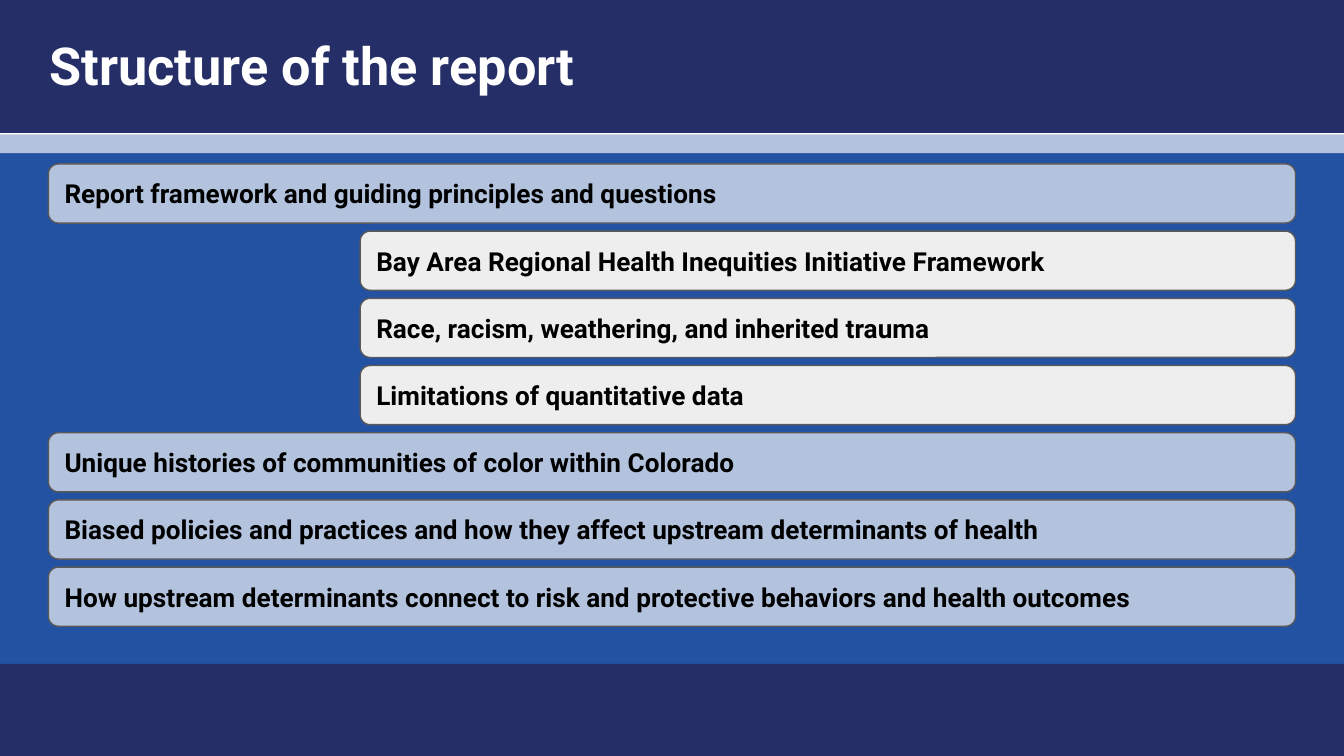
"""Build the "Structure of the report" slide."""
import pptx
import pptx.dml.color
import pptx.enum.shapes
import pptx.enum.text
import pptx.util

Inches = pptx.util.Inches
RGBColor = pptx.dml.color.RGBColor
MSO_SHAPE = pptx.enum.shapes.MSO_SHAPE
NAVY = RGBColor(0x25, 0x2E, 0x67)
BLUE = RGBColor(0x23, 0x52, 0xA2)
PALE_BLUE = RGBColor(0xB3, 0xC3, 0xDD)
PALE_GRAY = RGBColor(0xEE, 0xEE, 0xEE)
GRAY = RGBColor(0x59, 0x59, 0x59)
WHITE = RGBColor(0xFF, 0xFF, 0xFF)
BLACK = RGBColor(0, 0, 0)

SECTION_LEFT, SUBSECTION_LEFT, BAR_RIGHT = 0.36, 2.68, 9.64
FIRST_BAR_TOP, BAR_PITCH, BAR_HEIGHT = 1.22, 0.5, 0.44


def add_panel(kind, left, top, width, height, fill):
    panel = slide.shapes.add_shape(
        kind, Inches(left), Inches(top), Inches(width), Inches(height)
    )
    panel.shadow.inherit = False
    panel.fill.solid()
    panel.fill.fore_color.rgb = fill
    panel.line.fill.background()
    return panel


def set_text(shape, text, size, color, anchor):
    frame = shape.text_frame
    frame.text = text
    frame.word_wrap = True
    frame.auto_size = pptx.enum.text.MSO_AUTO_SIZE.NONE
    frame.vertical_anchor = anchor
    frame.margin_left = frame.margin_right = Inches(0.1)
    frame.margin_top = frame.margin_bottom = Inches(0.1)
    paragraph = frame.paragraphs[0]
    paragraph.alignment = pptx.enum.text.PP_ALIGN.LEFT
    paragraph.font.name = "Roboto"
    paragraph.font.size = pptx.util.Pt(size)
    paragraph.font.bold = True
    paragraph.font.color.rgb = color


presentation = pptx.Presentation()
presentation.slide_width = Inches(10)
presentation.slide_height = Inches(10) * 9 // 16
slide = presentation.slides.add_slide(presentation.slide_layouts[5])

bands = [
    (1.05, 3.98, BLUE),
    (4.94, 0.69, NAVY),
    (-0.01, 1, NAVY),
    (1, 0.14, PALE_BLUE),
]
for top, height, fill in bands:
    add_panel(MSO_SHAPE.RECTANGLE, 0, top, 10, height, fill)

title = slide.shapes.title
title.left, title.top = Inches(0.27), Inches(0.15)
title.width, title.height = Inches(9.32), Inches(0.63)
set_text(title, "Structure of the report", 28, WHITE, pptx.enum.text.MSO_ANCHOR.TOP)
title.element.getparent().append(title.element)

report_parts = [
    ("Report framework and guiding principles and questions", SECTION_LEFT, PALE_BLUE),
    ("Bay Area Regional Health Inequities Initiative Framework", SUBSECTION_LEFT, PALE_GRAY),
    ("Race, racism, weathering, and inherited trauma", SUBSECTION_LEFT, PALE_GRAY),
    ("Limitations of quantitative data", SUBSECTION_LEFT, PALE_GRAY),
    ("Unique histories of communities of color within Colorado", SECTION_LEFT, PALE_BLUE),
    ("Biased policies and practices and how they affect upstream determinants of health", SECTION_LEFT, PALE_BLUE),
    ("How upstream determinants connect to risk and protective behaviors and health outcomes", SECTION_LEFT, PALE_BLUE),
]
for row, (text, left, fill) in enumerate(report_parts):
    top = FIRST_BAR_TOP + row * BAR_PITCH
    bar = add_panel(MSO_SHAPE.ROUNDED_RECTANGLE, left, top, BAR_RIGHT - left, BAR_HEIGHT, fill)
    bar.adjustments[0] = 0.17
    bar.line.color.rgb = GRAY
    bar.line.width = pptx.util.Pt(0.75)
    set_text(bar, text, 14, BLACK, pptx.enum.text.MSO_ANCHOR.MIDDLE)

presentation.save("out.pptx")
